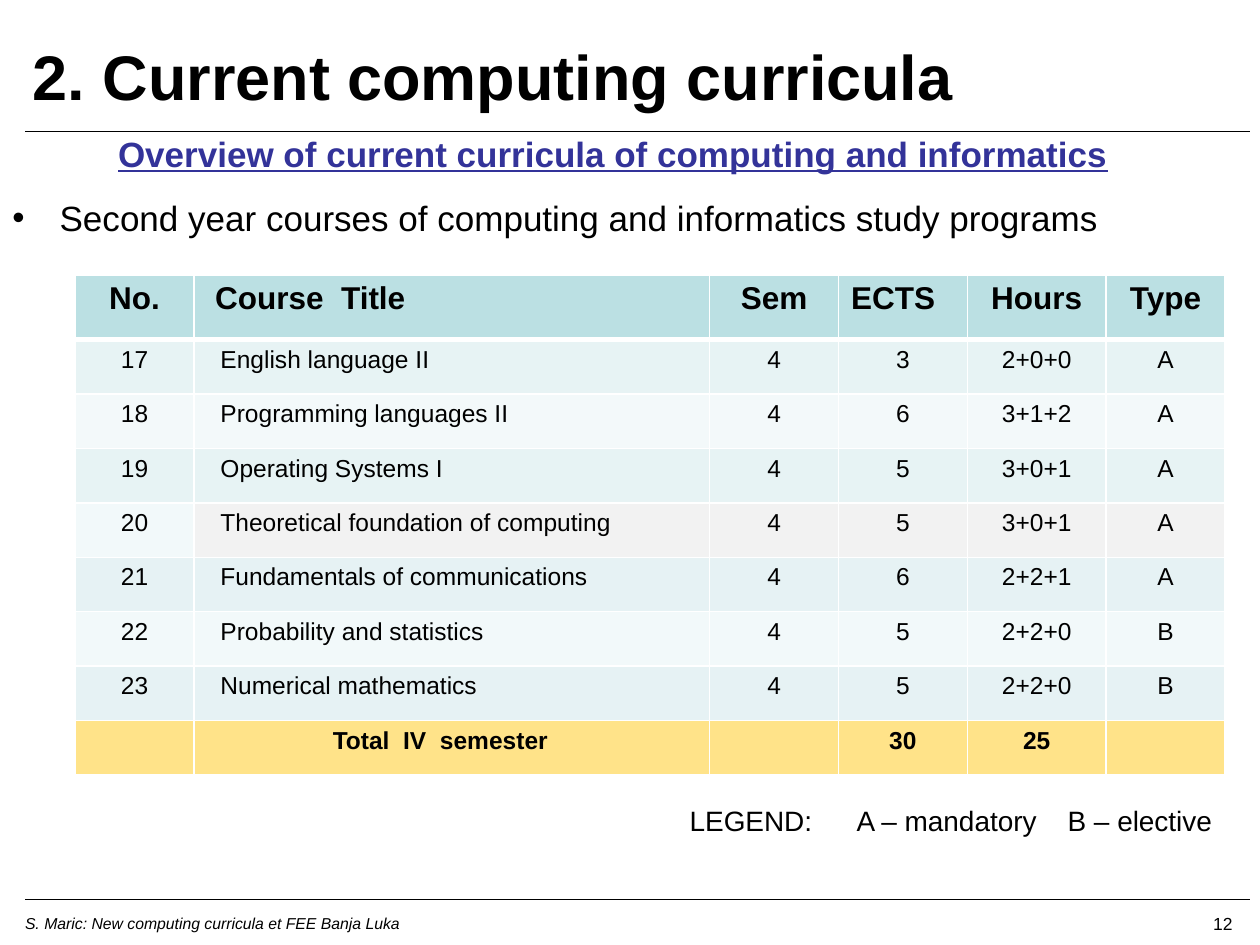
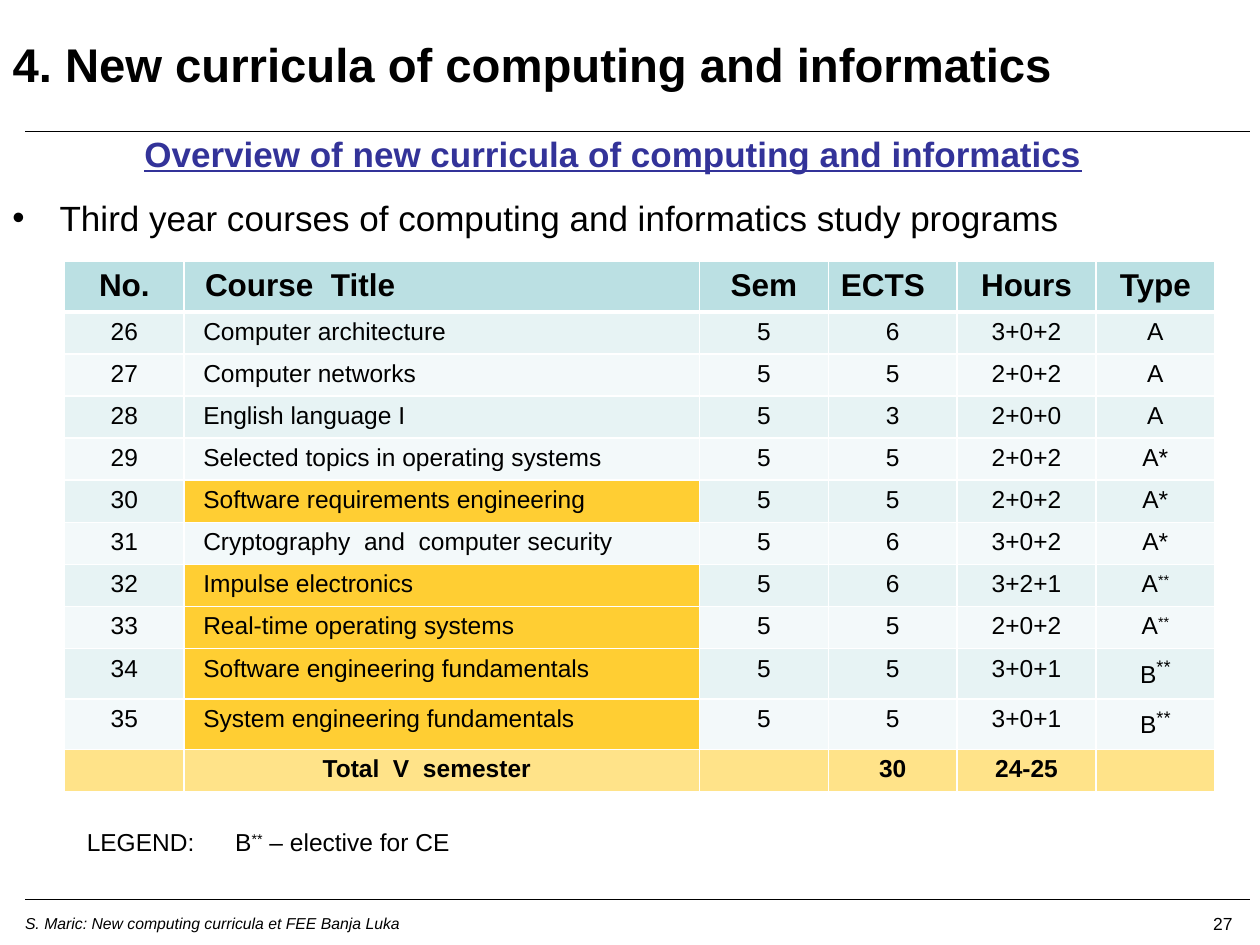
from dataclasses import dataclass

from lxml.etree import SubElement
from pptx import Presentation
from pptx.dml.color import RGBColor
from pptx.enum.text import MSO_ANCHOR, MSO_AUTO_SIZE, PP_ALIGN
from pptx.enum.shapes import MSO_CONNECTOR
from pptx.oxml.ns import qn
from pptx.util import Pt

FONT = "Arial"
BLACK = RGBColor(0x00, 0x00, 0x00)
WHITE = RGBColor(0xFF, 0xFF, 0xFF)
INDIGO = RGBColor(0x33, 0x33, 0x99)
HEADER = RGBColor(0xBB, 0xE0, 0xE3)
BAND_DARK = RGBColor(0xE7, 0xF3, 0xF4)
BAND_LIGHT = RGBColor(0xF3, 0xF9, 0xFA)
TEAL_TINT = RGBColor(0xE6, 0xF2, 0xF4)
ICE_TINT = RGBColor(0xF2, 0xF9, 0xFA)
GREY_TINT = RGBColor(0xF2, 0xF2, 0xF2)
GOLD = RGBColor(0xFF, 0xCE, 0x33)
TOTAL = RGBColor(0xFF, 0xE3, 0x89)

HEADINGS = ("No.", "Course  Title", "Sem", "ECTS", "Hours", "Type")
COLUMN_WIDTHS = (68.2, 294.6, 73.6, 73.6, 79.4, 67.8)
TITLE_COLUMN, ECTS_COLUMN = 1, 3
FOOTER = "S. Maric: New computing curricula et FEE Banja Luka"
STARS = "**"


@dataclass(frozen=True)
class Course:
    number: int
    title: str
    ects: int
    hours: str
    kind: str
    fill: RGBColor | None = None
    number_fill: RGBColor | None = None
    title_fill: RGBColor | None = None
    height: float | None = None


@dataclass(frozen=True)
class Title:
    text: str
    size: float
    left: float
    top: float
    width: float
    height: float
    anchor: MSO_ANCHOR


@dataclass(frozen=True)
class CourseTable:
    left: float
    top: float
    header_height: float
    row_height: float
    title_indent: float
    semester: int
    courses: tuple[Course, ...]
    total_title: str
    total_ects: str
    total_hours: str


@dataclass(frozen=True)
class Legend:
    text: str
    size: float
    left: float
    top: float
    width: float
    tabs: tuple[float, ...]


@dataclass(frozen=True)
class CurriculumPage:
    number: int
    title: Title
    heading: str
    bullet: str
    table: CourseTable
    legend: Legend


CURRENT = CurriculumPage(
    12,
    Title("2. Current computing curricula", 36, 11.5, 10.4, 564.5, 57.6, MSO_ANCHOR.BOTTOM),
    "Overview of current curricula of computing and informatics",
    "Second year courses of computing and informatics study programs",
    CourseTable(
        42.8, 157, 37.1, 31.1, 15, 4,
        (
            Course(17, "English language II", 3, "2+0+0", "A"),
            Course(18, "Programming languages II", 6, "3+1+2", "A"),
            Course(19, "Operating Systems I", 5, "3+0+1", "A"),
            Course(20, "Theoretical foundation of computing", 5, "3+0+1", "A", GREY_TINT, ICE_TINT),
            Course(21, "Fundamentals of communications", 6, "2+2+1", "A", TEAL_TINT),
            Course(22, "Probability and statistics", 5, "2+2+0", "B", ICE_TINT),
            Course(23, "Numerical mathematics", 5, "2+2+0", "B", TEAL_TINT),
        ),
        "Total  IV  semester", "30", "25",
    ),
    Legend("LEGEND:\tA – mandatory\tB – elective", 16, 387, 455.5, 320, (95.4, 216)),
)

NEW = CurriculumPage(
    27,
    Title("4. New curricula of computing and informatics", 27, 0, 16.6, 615, 40.3, MSO_ANCHOR.TOP),
    "Overview of new curricula of computing and informatics",
    "Third year courses of computing and informatics study programs",
    CourseTable(
        37, 149.4, 26.5, 23, 11, 5,
        (
            Course(26, "Computer architecture", 6, "3+0+2", "A"),
            Course(27, "Computer networks", 5, "2+0+2", "A"),
            Course(28, "English language I", 3, "2+0+0", "A"),
            Course(29, "Selected topics in operating systems", 5, "2+0+2", "A*"),
            Course(30, "Software requirements engineering", 5, "2+0+2", "A*", title_fill=GOLD),
            Course(31, "Cryptography  and  computer security", 6, "3+0+2", "A*"),
            Course(32, "Impulse electronics", 6, "3+2+1", "A**", title_fill=GOLD),
            Course(33, "Real-time operating systems", 5, "2+0+2", "A**", title_fill=GOLD),
            Course(34, "Software engineering fundamentals", 5, "3+0+1", "B**", title_fill=GOLD, height=27.3),
            Course(35, "System engineering fundamentals", 5, "3+0+1", "B**", title_fill=GOLD, height=27.3),
        ),
        "Total  V  semester", "30", "24-25",
    ),
    Legend("LEGEND:\tB** – elective for CE", 14, 42.5, 469, 312, (84.8,)),
)


def add_span(para, text: str, size: float, color: RGBColor = BLACK, bold: bool = False,
             italic: bool = False, underline: bool = False):
    span = para.add_run()
    span.text = text
    font = span.font
    font.name, font.size, font.color.rgb = FONT, Pt(size), color
    font.bold, font.italic, font.underline = bold, italic, underline
    return span


def add_starred(para, text: str, size: float, star_size: float, bold: bool = False) -> None:
    before, stars, after = text.partition(STARS)
    add_span(para, before, size, bold=bold)
    if stars:
        span = add_span(para, stars, star_size, bold=bold)
        span._r.get_or_add_rPr().set("baseline", "30000")
    if after:
        add_span(para, after, size, bold=bold)


def add_box(page, left: float, top: float, width: float, height: float):
    box = page.shapes.add_textbox(Pt(left), Pt(top), Pt(width), Pt(height))
    box.text_frame.word_wrap = True
    return box.text_frame


def add_rule(page, top: float) -> None:
    rule = page.shapes.add_connector(MSO_CONNECTOR.STRAIGHT, Pt(14.4), Pt(top), Pt(714.2), Pt(top))
    rule.line.color.rgb = BLACK
    rule.line.width = Pt(0.75)
    SubElement(rule._element.spPr, qn("a:effectLst"))


def add_frame(page, number: int) -> None:
    for top in (75, 514):
        add_rule(page, top)
    author = add_box(page, 7.2, 518.4, 516, 18).paragraphs[0]
    add_span(author, FOOTER, 9, italic=True)
    counter = add_box(page, 586.8, 518.4, 124.6, 17.3).paragraphs[0]
    counter.alignment = PP_ALIGN.RIGHT
    add_span(counter, str(number), 10)


def set_title(page, title: Title) -> None:
    box = page.shapes.title
    box.left, box.top = Pt(title.left), Pt(title.top)
    box.width, box.height = Pt(title.width), Pt(title.height)
    frame = box.text_frame
    frame.auto_size = MSO_AUTO_SIZE.NONE
    frame.vertical_anchor = title.anchor
    para = frame.paragraphs[0]
    para.alignment = PP_ALIGN.LEFT
    add_span(para, title.text, title.size, bold=True)


def add_intro(page, heading: str, bullet: str) -> None:
    frame = add_box(page, 0, 72, 700.6, 72)
    para = frame.paragraphs[0]
    para.alignment = PP_ALIGN.CENTER
    para.space_after = Pt(13)
    add_span(para, heading, 20, INDIGO, bold=True, underline=True)
    para = frame.add_paragraph()
    properties = para._p.get_or_add_pPr()
    properties.set("marL", str(Pt(27)))
    properties.set("indent", str(Pt(-27)))
    SubElement(properties, qn("a:buFont"), typeface=FONT)
    SubElement(properties, qn("a:buChar"), char="•")
    add_span(para, bullet, 20)


def add_border(cell, side: str, width: float) -> None:
    line = SubElement(cell._tc.get_or_add_tcPr(), qn(f"a:ln{side}"), w=str(Pt(width)))
    fill = SubElement(line, qn("a:solidFill"))
    SubElement(fill, qn("a:srgbClr"), val=str(WHITE))


def fill_row(table, row: int, height: float, texts: tuple[str, ...], fills: list[RGBColor],
             title_indent: float, size: float = 14, bold: bool = False) -> None:
    table.rows[row].height = Pt(height)
    for column, (text, fill) in enumerate(zip(texts, fills)):
        cell = table.cell(row, column)
        top, bottom = (3 if row == 1 else 1), (3 if row == 0 else 1)
        for side, width in (("L", 1), ("R", 1), ("T", top), ("B", bottom)):
            add_border(cell, side, width)
        cell.fill.solid()
        cell.fill.fore_color.rgb = fill
        para = cell.text_frame.paragraphs[0]
        if column == TITLE_COLUMN:
            cell.margin_left = Pt(title_indent)
        elif row or column != ECTS_COLUMN:
            para.alignment = PP_ALIGN.CENTER
        if text:
            add_starred(para, text, size, 18 if text.startswith("B") else size, bold)
        else:
            SubElement(para._p, qn("a:endParaRPr"), sz=str(size * 100))


def add_course_table(page, data: CourseTable) -> None:
    count = len(data.courses)
    height = data.header_height + data.row_height * (count + 1)
    table = page.shapes.add_table(count + 2, len(HEADINGS), Pt(data.left), Pt(data.top),
                                  Pt(sum(COLUMN_WIDTHS)), Pt(height)).table
    for column, width in zip(table.columns, COLUMN_WIDTHS):
        column.width = Pt(width)
    columns = len(HEADINGS)
    fill_row(table, 0, data.header_height, HEADINGS, [HEADER] * columns, 12, 18, True)
    for row, course in enumerate(data.courses, 1):
        base = course.fill or (BAND_DARK if row % 2 else BAND_LIGHT)
        fills = [course.number_fill or base, course.title_fill or base] + [base] * (columns - 2)
        texts = (str(course.number), course.title, str(data.semester), str(course.ects),
                 course.hours, course.kind)
        fill_row(table, row, course.height or data.row_height, texts, fills, data.title_indent)
    totals = ("", data.total_title, "", data.total_ects, data.total_hours, "")
    fill_row(table, count + 1, data.row_height, totals, [TOTAL] * columns, 79.2, bold=True)


def add_legend(page, legend: Legend) -> None:
    para = add_box(page, legend.left, legend.top, legend.width, 26).paragraphs[0]
    tabs = SubElement(para._p.get_or_add_pPr(), qn("a:tabLst"))
    for position in legend.tabs:
        SubElement(tabs, qn("a:tab"), pos=str(Pt(position)), algn="l")
    add_starred(para, legend.text, legend.size, legend.size)


def add_page(deck, content: CurriculumPage) -> None:
    page = deck.slides.add_slide(deck.slide_layouts.get_by_name("Title Only"))
    add_frame(page, content.number)
    set_title(page, content.title)
    add_intro(page, content.heading, content.bullet)
    add_course_table(page, content.table)
    add_legend(page, content.legend)


def main() -> None:
    deck = Presentation()
    deck.slide_width, deck.slide_height = Pt(720), Pt(540)
    for content in (CURRENT, NEW):
        add_page(deck, content)
    deck.save("out.pptx")


if __name__ == "__main__":
    main()
